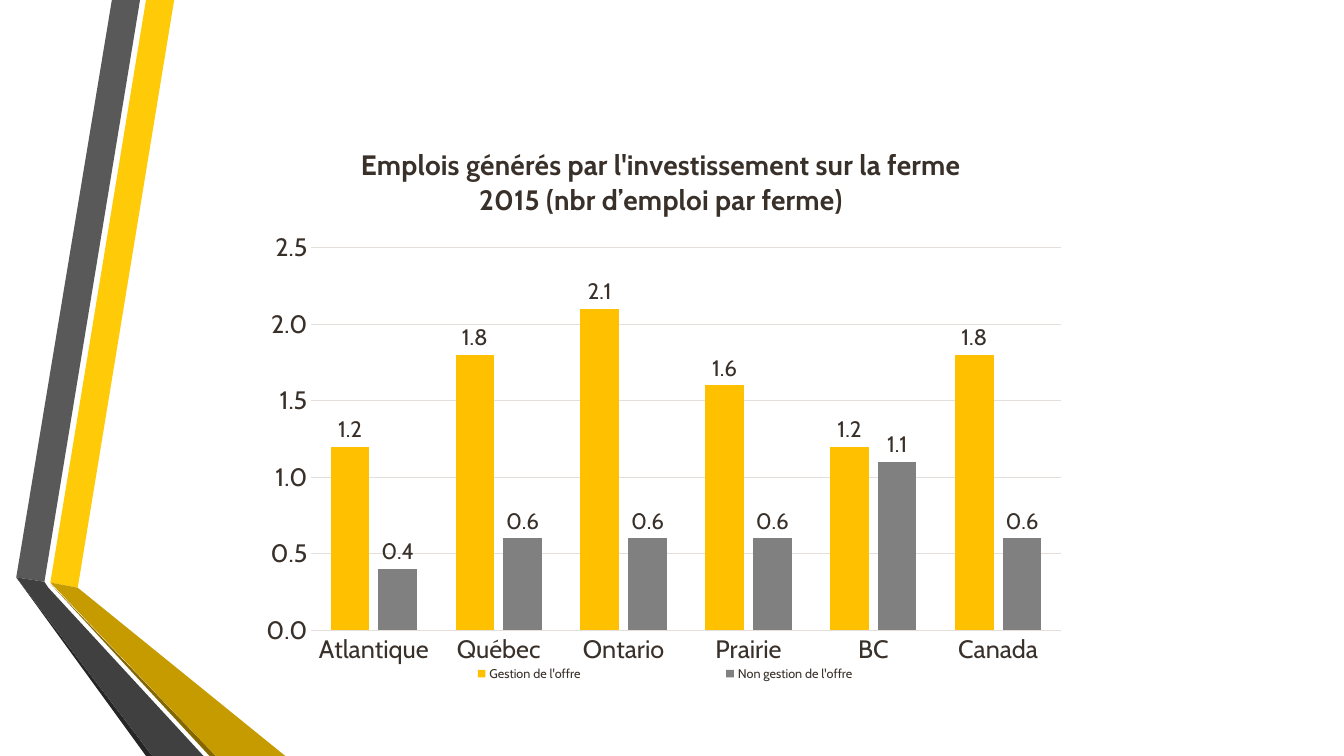
import pptx
import pptx.chart.data
import pptx.dml.color
import pptx.enum.chart
import pptx.oxml
import pptx.oxml.ns
import pptx.util

Cm, Pt = pptx.util.Cm, pptx.util.Pt
XL = pptx.enum.chart

FONT, TEXT, GRID = "Cabin", "39302A", "E5DFDC"
BOTTOM = 19.05

# Ribbon facets: fill and corner points in cm
RIBBONS = [
    ("FFCA08", [(1.27, 14.68), (1.96, 14.81), (4.39, 0), (3.68, 0)]),
    ("595959", [(3.53, 0), (2.82, 0), (0.41, 14.55), (1.12, 14.66)]),
    ("262626", [(0.41, 14.55), (3.68, BOTTOM), (3.84, BOTTOM)]),
    ("846700", [(1.27, 14.71), (5.28, BOTTOM), (5.44, BOTTOM)]),
    ("C59B00", [(1.27, 14.68), (5.44, BOTTOM), (7.19, BOTTOM), (1.96, 14.81)]),
    ("404040", [(5.13, BOTTOM), (1.22, 14.81), (1.12, 14.66), (0.41, 14.55),
                (3.84, BOTTOM)]),
]

TITLE = ["Emplois générés par l'investissement sur la ferme",
         "2015 (nbr d’emploi par ferme)"]
REGIONS = ["Atlantique", "Québec", "Ontario", "Prairie", "BC", "Canada"]
SERIES = [
    ("Gestion de l'offre", "FFC000", [1.2, 1.8, 2.1, 1.6, 1.2, 1.8]),
    ("Non gestion de l'offre", "808080", [0.4, 0.6, 0.6, 0.6, 1.1, 0.6]),
]


def rgb(value):
    return pptx.dml.color.RGBColor.from_string(value)


def set_font(font, size, bold=False, color=TEXT):
    font.name, font.size, font.bold = FONT, Pt(size), bold
    font.color.rgb = rgb(color)


def set_line(line, color):
    line.color.rgb = rgb(color)
    line.width = Pt(0.75)


def add_ribbon(s, color, points):
    corners = [(Cm(x), Cm(y)) for x, y in points]
    builder = s.shapes.build_freeform(*corners[0], scale=1.0)
    builder.add_line_segments(corners[1:], close=True)
    sp = builder.convert_to_shape()
    sp.shadow.inherit = False
    sp.fill.solid()
    sp.fill.fore_color.rgb = rgb(color)
    sp.line.fill.background()


def set_layout(parent, x, y, w, h, inner=False):
    """Place a chart part by fractions of the chart's size."""
    target = '<c:layoutTarget val="inner"/>' if inner else ""
    sizes = "".join(f'<c:{k} val="{v}"/>' for k, v in zip("xywh", (x, y, w, h)))
    layout = pptx.oxml.parse_xml(
        f'<c:layout {pptx.oxml.ns.nsdecls("c")}><c:manualLayout>{target}'
        f'<c:xMode val="edge"/><c:yMode val="edge"/>{sizes}'
        '</c:manualLayout></c:layout>')
    for old in parent.findall(pptx.oxml.ns.qn("c:layout")):
        parent.remove(old)
    pos = parent.find(pptx.oxml.ns.qn("c:legendPos"))
    if pos is None:
        parent.insert(0, layout)
    else:
        pos.addnext(layout)


def format_title(chart):
    tf = chart.chart_title.text_frame
    for i, line in enumerate(TITLE):
        p = tf.add_paragraph() if i else tf.paragraphs[0]
        r = p.add_run()
        r.text = line
        set_font(r.font, 20, bold=True)
    chart.chart_title.include_in_layout = False


def format_axes(chart):
    for axis in (chart.category_axis, chart.value_axis):
        axis.major_tick_mark = axis.minor_tick_mark = XL.XL_TICK_MARK.NONE
        set_font(axis.tick_labels.font, 18)
    set_line(chart.category_axis.format.line, GRID)
    values = chart.value_axis
    values.minimum_scale, values.maximum_scale, values.major_unit = 0, 2.5, 0.5
    values.format.line.fill.background()
    values.has_major_gridlines = True
    set_line(values.major_gridlines.format.line, GRID)
    values.tick_labels.number_format = "0.0"
    values.tick_labels.number_format_is_linked = False


def format_series(series, color):
    series.format.fill.solid()
    series.format.fill.fore_color.rgb = rgb(color)
    labels = series.data_labels
    labels.show_value = True
    labels.position = XL.XL_LABEL_POSITION.OUTSIDE_END
    labels.number_format = "0.0"
    labels.number_format_is_linked = False
    set_font(labels.font, 16)


def add_jobs_chart(s):
    data = pptx.chart.data.CategoryChartData(number_format="0.0")
    data.categories = REGIONS
    for name, _, values in SERIES:
        data.add_series(name, values)
    chart = s.shapes.add_chart(
        XL.XL_CHART_TYPE.COLUMN_CLUSTERED,
        Cm(6.17), Cm(3.18), Cm(20.98), Cm(14.6), data).chart
    set_font(chart.font, 10, color="000000")
    format_title(chart)
    format_axes(chart)

    # Columns
    plot = chart.plots[0]
    plot.gap_width, plot.overlap, plot.vary_by_categories = 100, -24, False
    for series, (_, color, _) in zip(plot.series, SERIES):
        format_series(series, color)

    # Legend and plot placement
    chart.has_legend = True
    legend = chart.legend
    legend.position = XL.XL_LEGEND_POSITION.BOTTOM
    legend.include_in_layout = False
    set_font(legend.font, 9)
    legend_xml = chart.element.find(".//" + pptx.oxml.ns.qn("c:legend"))
    plot_xml = chart.element.find(".//" + pptx.oxml.ns.qn("c:plotArea"))
    set_layout(legend_xml, 0.11, 0.92, 0.79, 0.05)
    set_layout(plot_xml, 0.08, 0.21, 0.9, 0.66, inner=True)


def main():
    prs = pptx.Presentation()
    prs.slide_width, prs.slide_height = Cm(33.87), Cm(BOTTOM)
    s = prs.slides.add_slide(prs.slide_layouts[6])
    for color, points in RIBBONS:
        add_ribbon(s, color, points)
    add_jobs_chart(s)
    prs.save("out.pptx")


if __name__ == "__main__":
    main()
